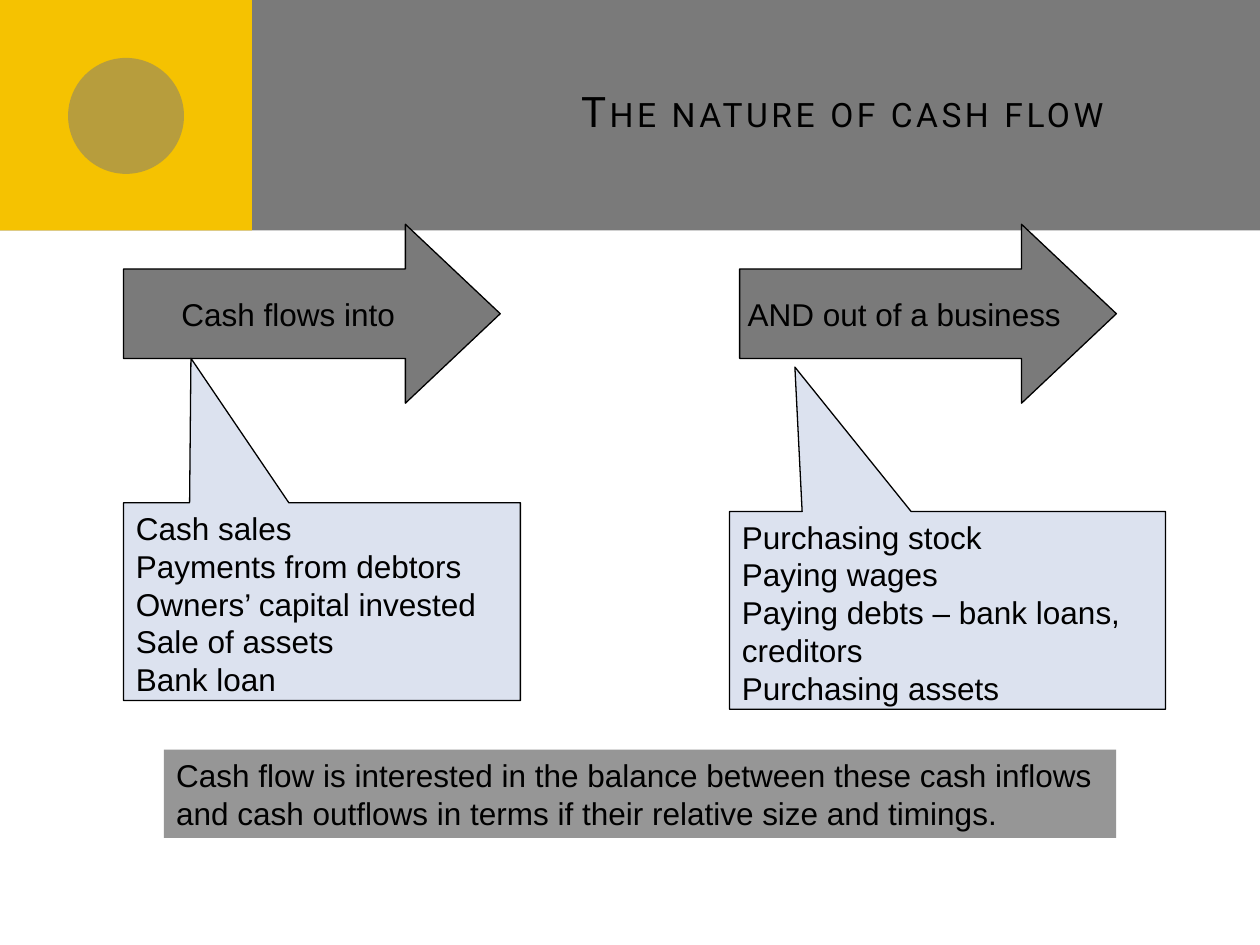
from dataclasses import dataclass

from lxml import etree
from pptx import Presentation
from pptx.dml.color import RGBColor
from pptx.enum.shapes import MSO_SHAPE
from pptx.enum.text import MSO_ANCHOR, PP_ALIGN
from pptx.oxml.ns import qn
from pptx.shapes.autoshape import Shape
from pptx.slide import Slide
from pptx.util import Inches, Pt

RECTANGLE = MSO_SHAPE.RECTANGLE
OVAL = MSO_SHAPE.OVAL
RIGHT_ARROW = MSO_SHAPE.RIGHT_ARROW
CALLOUT = MSO_SHAPE.RECTANGULAR_CALLOUT
TOP, MIDDLE = MSO_ANCHOR.TOP, MSO_ANCHOR.MIDDLE
LEFT, CENTER, RIGHT = PP_ALIGN.LEFT, PP_ALIGN.CENTER, PP_ALIGN.RIGHT

BLACK = RGBColor(0x00, 0x00, 0x00)
GRAY = RGBColor(0x7A, 0x7A, 0x7A)
LIGHT_GRAY = RGBColor(0x96, 0x96, 0x96)
YELLOW = RGBColor(0xF5, 0xC2, 0x01)
PALE_BLUE = RGBColor(0xDC, 0xE2, 0xEF)

BODY_FONT, TITLE_FONT = "Arial", "Roboto"
BAND_HEIGHT = 1.83


@dataclass(frozen=True)
class Box:
    left: float
    top: float
    width: float
    height: float


@dataclass(frozen=True)
class Flow:
    heading: str
    arrow: Box
    examples: str
    callout: Box
    pointer: tuple[float, float]


FLOWS = (
    Flow(
        "Cash flows into",
        Box(0.98, 1.78, 2.99, 1.42),
        "Cash sales\nPayments from debtors\nOwners’ capital invested\nSale of assets\nBank loan",
        Box(0.98, 3.99, 3.15, 1.57),
        (-0.33, -1.23),
    ),
    Flow(
        "AND out of a business",
        Box(5.87, 1.78, 2.99, 1.42),
        "Purchasing stock\nPaying wages\nPaying debts – bank loans, creditors\nPurchasing assets",
        Box(5.79, 4.06, 3.46, 1.57),
        (-0.35, -1.23),
    ),
)
SUMMARY = (
    "Cash flow is interested in the balance between these cash inflows "
    "and cash outflows in terms if their relative size and timings."
)


def inches(box: Box) -> tuple[Inches, ...]:
    """Return the box as left, top, width and height lengths."""
    return tuple(Inches(v) for v in (box.left, box.top, box.width, box.height))


def draw_shape(slide: Slide, preset: MSO_SHAPE, box: Box, fill: RGBColor,
               outlined: bool = False, adjustments: tuple[float, ...] = ()) -> Shape:
    """Draw a filled preset shape, with a thin black outline if asked."""
    shape = slide.shapes.add_shape(preset, *inches(box))
    shape.shadow.inherit = False
    shape.fill.solid()
    shape.fill.fore_color.rgb = fill
    if outlined:
        shape.line.color.rgb = BLACK
        shape.line.width = Pt(0.75)
    else:
        shape.line.fill.background()
    for index, value in enumerate(adjustments):
        shape.adjustments[index] = value
    return shape


def write_text(shape: Shape, text: str, align: PP_ALIGN = LEFT, anchor: MSO_ANCHOR = TOP,
               wrap: bool = True, font: str = BODY_FONT, size: float = 18) -> None:
    """Fill a shape with black text, one paragraph per line."""
    frame = shape.text_frame
    frame.text = text
    frame.word_wrap = wrap
    frame.vertical_anchor = anchor
    for paragraph in frame.paragraphs:
        paragraph.alignment = align
        for run in paragraph.runs:
            run.font.name = font
            run.font.size = Pt(size)
            run.font.color.rgb = BLACK


def draw_header(slide: Slide) -> None:
    """Draw the header band, its emblem and the title."""
    draw_shape(slide, RECTANGLE, Box(0, 0, 10, BAND_HEIGHT), GRAY)
    draw_shape(slide, RECTANGLE, Box(0, 0, 2, BAND_HEIGHT), YELLOW)
    disc = draw_shape(slide, OVAL, Box(0.54, 0.46, 0.92, 0.92), GRAY)
    disc_color = disc.fill._xPr.find(qn("a:solidFill")).find(qn("a:srgbClr"))
    etree.SubElement(disc_color, qn("a:alpha")).set("val", "50000")

    title = slide.shapes.add_textbox(*inches(Box(2.67, 0.25, 6.83, 1.25)))
    write_text(title, "The nature of cash flow", RIGHT, MIDDLE, font=TITLE_FONT, size=24)
    title_properties = title.text_frame.paragraphs[0].runs[0].font._element
    title_properties.set("cap", "small")
    title_properties.set("spc", "200")


def draw_flow(slide: Slide, flow: Flow) -> None:
    """Draw one direction of cash flow with its callout of examples."""
    arrow = draw_shape(slide, RIGHT_ARROW, flow.arrow, GRAY, True, (0.5, 0.53))
    write_text(arrow, flow.heading, CENTER, MIDDLE, wrap=False)
    callout = draw_shape(slide, CALLOUT, flow.callout, PALE_BLUE, True, flow.pointer)
    write_text(callout, flow.examples)


def main() -> None:
    """Build the cash flow slide and save it."""
    presentation = Presentation()
    presentation.slide_width = Inches(10)
    presentation.slide_height = Inches(7.5)
    slide = presentation.slides.add_slide(presentation.slide_layouts[6])
    draw_header(slide)
    for flow in FLOWS:
        draw_flow(slide, flow)
    summary = draw_shape(slide, RECTANGLE, Box(1.3, 5.95, 7.56, 0.7), LIGHT_GRAY)
    write_text(summary, SUMMARY)
    presentation.save("out.pptx")


if __name__ == "__main__":
    main()
